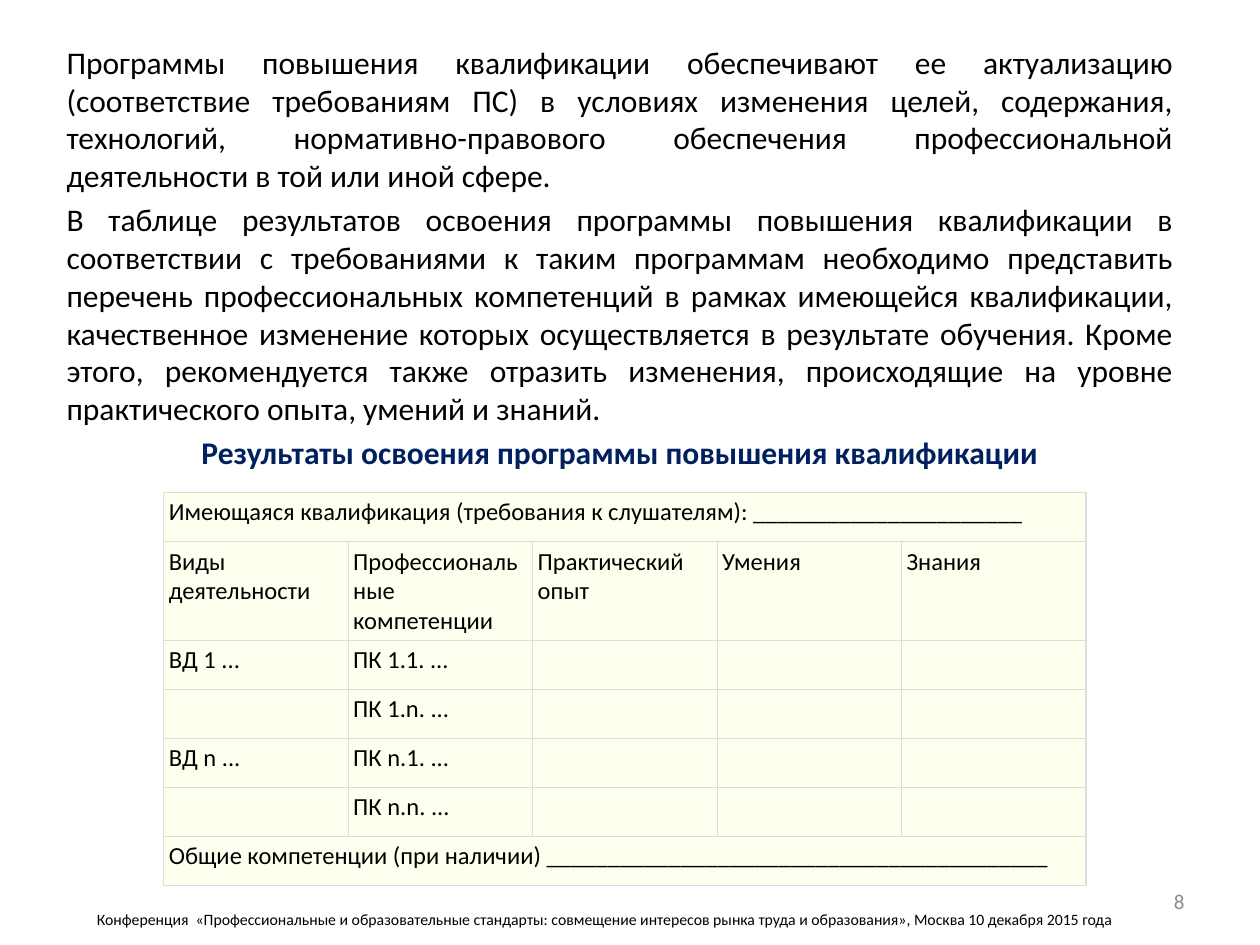
"""Build the slide on the results of a professional development programme."""
from lxml import etree
from pptx import Presentation
from pptx.dml.color import RGBColor
from pptx.enum import text
from pptx.oxml import ns
from pptx.util import Inches, Pt

BLACK = RGBColor(0x00, 0x00, 0x00)
GREY = RGBColor(0x8C, 0x8C, 0x8C)
NAVY = RGBColor(0x00, 0x20, 0x60)
CREAM = RGBColor(0xFF, 0xFF, 0xEF)
BORDER = RGBColor(0xDD, 0xDD, 0xDD)
ALIGN = text.PP_ALIGN
MIDDLE = text.MSO_ANCHOR.MIDDLE

BODY = [
    "Программы повышения квалификации обеспечивают ее актуализацию (соответствие "
    "требованиям ПС) в условиях изменения целей, содержания, технологий, "
    "нормативно-правового обеспечения профессиональной деятельности в той или иной сфере.",
    "В таблице результатов освоения программы повышения квалификации в соответствии с "
    "требованиями к таким программам необходимо представить перечень профессиональных "
    "компетенций в рамках имеющейся квалификации, качественное изменение которых "
    "осуществляется в результате обучения. Кроме этого, рекомендуется также отразить "
    "изменения, происходящие на уровне практического опыта, умений и знаний.",
]
HEADING = "Результаты освоения программы повышения квалификации"
FOOTER = ("Конференция  «Профессиональные и образовательные стандарты: совмещение интересов "
          "рынка труда и образования», Москва 10 декабря 2015 года")
PAGE = "8"
ROWS = [
    ["Имеющаяся квалификация (требования к слушателям): " + "_" * 22],
    ["Виды деятельности", "Профессиональные компетенции", "Практический опыт", "Умения", "Знания"],
    ["ВД 1 ...", "ПК 1.1. ...", "", "", ""],
    ["", "ПК 1.n. ...", "", "", ""],
    ["ВД n ...", "ПК n.1. ...", "", "", ""],
    ["", "ПК n.n. ...", "", "", ""],
    ["Общие компетенции (при наличии) " + "_" * 41],
]
COLS = 5
COL_W, ROW_H, HEAD_H = 1.464, 0.39, 0.78


def write(p, words, size=18, color=BLACK, bold=False, align=ALIGN.LEFT, before=0):
    p.alignment = align
    p.space_before = Pt(before)
    r = p.add_run()
    r.text = words
    r.font.name = "Calibri"
    r.font.size = Pt(size)
    r.font.bold = bold
    r.font.color.rgb = color


def add_box(s, x, y, w, h, anchor=text.MSO_ANCHOR.TOP):
    tf = s.shapes.add_textbox(Inches(x), Inches(y), Inches(w), Inches(h)).text_frame
    tf.word_wrap = True
    tf.vertical_anchor = anchor
    return tf


def style_cell(cell):
    cell.margin_left = cell.margin_right = Inches(0.04)
    cell.margin_top = cell.margin_bottom = Inches(0.04)
    tc_pr = cell._tc.get_or_add_tcPr()
    for side in ("a:lnL", "a:lnR", "a:lnT", "a:lnB"):
        ln = etree.SubElement(tc_pr, ns.qn(side), w=str(Pt(0.75)))
        fill = etree.SubElement(ln, ns.qn("a:solidFill"))
        etree.SubElement(fill, ns.qn("a:srgbClr"), val=str(BORDER))
    cell.fill.solid()
    cell.fill.fore_color.rgb = CREAM


def add_results(s, x, y):
    height = ROW_H * (len(ROWS) - 1) + HEAD_H
    table = s.shapes.add_table(len(ROWS), COLS, Inches(x), Inches(y),
                               Inches(COL_W * COLS), Inches(height)).table
    table.first_row = table.horz_banding = False
    for col in table.columns:
        col.width = Inches(COL_W)
    for i, words in enumerate(ROWS):
        table.rows[i].height = Inches(HEAD_H if i == 1 else ROW_H)
        for j in range(COLS):
            style_cell(table.cell(i, j))
        if len(words) == 1:
            table.cell(i, 0).merge(table.cell(i, COLS - 1))
        for j, word in enumerate(words):
            p = table.cell(i, j).text_frame.paragraphs[0]
            if word:
                write(p, word, size=14)
            else:
                p.font.size = Pt(14)


def main():
    prs = Presentation()
    prs.slide_width, prs.slide_height = Inches(10), Inches(7.5)
    s = prs.slides.add_slide(prs.slide_layouts[6])

    write(add_box(s, 0.67, 7.14, 8.5, 0.31, MIDDLE).paragraphs[0], FOOTER, size=9)

    tf = add_box(s, 0.43, 0.29, 8.98, 3.62)
    for i, words in enumerate(BODY):
        p = tf.add_paragraph() if i else tf.paragraphs[0]
        write(p, words, align=ALIGN.JUSTIFY, before=3.6)
    write(tf.add_paragraph(), HEADING, color=NAVY, bold=True, align=ALIGN.CENTER, before=3.6)

    page = add_box(s, 7.17, 6.95, 2.33, 0.4, MIDDLE)
    write(page.paragraphs[0], PAGE, size=12, color=GREY, align=ALIGN.RIGHT)

    add_results(s, 1.3, 3.91)
    prs.save("out.pptx")


if __name__ == "__main__":
    main()
